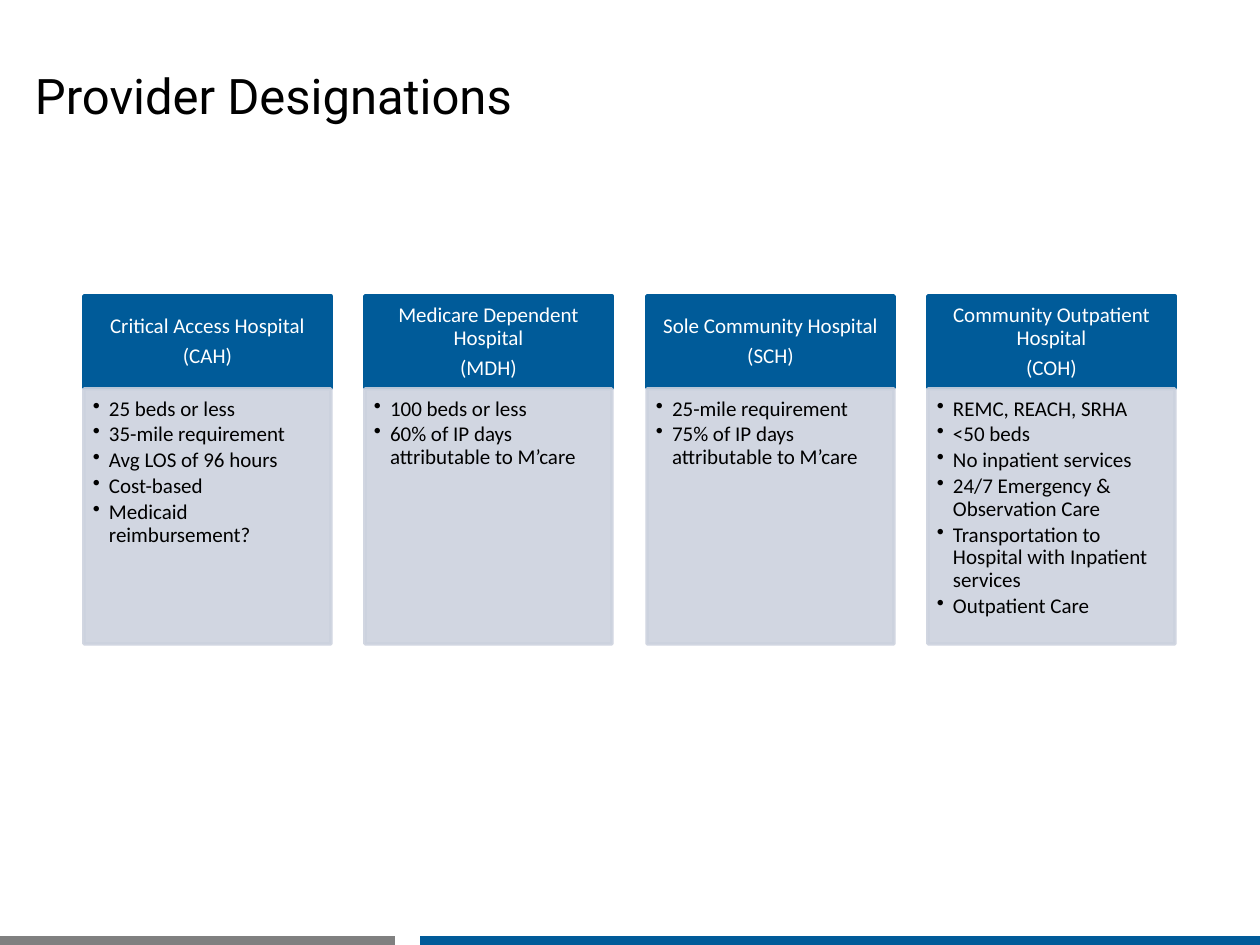
from lxml.etree import SubElement
from pptx import Presentation
from pptx.dml.color import RGBColor
from pptx.enum.shapes import MSO_SHAPE as Shape
from pptx.enum.text import MSO_ANCHOR as Anchor, MSO_AUTO_SIZE as Auto, PP_ALIGN as Align
from pptx.oxml.ns import qn
from pptx.util import Pt

PX = 914400 / 126
BLUE = RGBColor(0x00, 0x5B, 0x99)
PALE = RGBColor(0xCC, 0xD2, 0xDE)
GRAY = RGBColor(0x80, 0x80, 0x80)
WHITE = RGBColor(0xFF, 0xFF, 0xFF)
BLACK = RGBColor(0x00, 0x00, 0x00)

HEAD = {"size": Pt(12), "name": "Calibri", "color": WHITE}
BODY = {"size": Pt(12), "name": "Calibri", "color": BLACK}
TITLE = {"size": Pt(28), "name": "Roboto", "color": BLACK}

CARDS = [
    (["Critical Access Hospital", "(CAH)"],
     ["25 beds or less", "35-mile requirement", "Avg LOS of 96 hours",
      "Cost-based", "Medicaid reimbursement?"]),
    (["Medicare Dependent Hospital", "(MDH)"],
     ["100 beds or less", "60% of IP days attributable to M’care"]),
    (["Sole Community Hospital", "(SCH)"],
     ["25-mile requirement", "75% of IP days attributable to M’care"]),
    (["Community Outpatient Hospital", "(COH)"],
     ["REMC, REACH, SRHA", "<50 beds", "No inpatient services",
      "24/7 Emergency & Observation Care",
      "Transportation to Hospital with Inpatient services", "Outpatient Care"]),
]


def add_rect(box, color, line=True, alpha=None):
    rect = slide.shapes.add_shape(Shape.RECTANGLE, *[round(n * PX) for n in box])
    rect.shadow.inherit = False
    rect.fill.solid()
    rect.fill.fore_color.rgb = color
    if line:
        rect.line.color.rgb = color
        rect.line.width = Pt(2)
    else:
        rect.line.fill.background()
    if alpha:
        for node in rect.fill._xPr.iter(qn("a:srgbClr")):
            SubElement(node, qn("a:alpha"), val=str(alpha * 1000))
    return rect


def put_text(shape, lines, style, pads, anchor, align, after=0, bullet=False):
    frame = shape.text_frame
    frame.text = "\n".join(lines)
    sides = ("margin_left", "margin_top", "margin_right", "margin_bottom")
    form = dict(zip(sides, [round(n * PX) for n in pads]))
    form.update(word_wrap=True, auto_size=Auto.NONE, vertical_anchor=anchor)
    for key, value in form.items():
        setattr(frame, key, value)
    for para in frame.paragraphs:
        if bullet:
            para.level = 1
            props = para._p.get_or_add_pPr()
            props.set("marL", str(round(16 * PX)))
            props.set("indent", str(round(-16 * PX)))
            SubElement(props, qn("a:buChar"), char="•")
        para.alignment = align
        if after:
            para.line_spacing = 0.9
            para.space_after = Pt(after)
        for key, value in style.items():
            if key == "color":
                para.font.color.rgb = value
            else:
                setattr(para.font, key, value)


deck = Presentation()
deck.slide_width = round(1260 * PX)
deck.slide_height = round(945 * PX)
slide = deck.slides.add_slide(deck.slide_layouts[5])

title = slide.shapes.title
place = {"left": 22, "top": 63, "width": 882, "height": 63}
for key, value in place.items():
    setattr(title, key, round(value * PX))
put_text(title, ["Provider Designations"], TITLE, (13, 6, 13, 6),
         Anchor.MIDDLE, Align.LEFT)

for col, (head, items) in enumerate(CARDS):
    left = 84 + col * 563 // 2
    top = add_rect((left, 296, 247, 92), BLUE)
    put_text(top, head, HEAD, (11, 6, 11, 6), Anchor.MIDDLE, Align.CENTER, 4.2)
    body = add_rect((left, 389, 247, 255), PALE, alpha=90)
    put_text(body, items, BODY, (9, 9, 12, 13), Anchor.TOP, Align.LEFT, 1.8, True)

for left, width, color in [(420, 840, BLUE), (0, 395, GRAY)]:
    add_rect((left, 936, width, 9), color, line=False)

deck.save("out.pptx")
